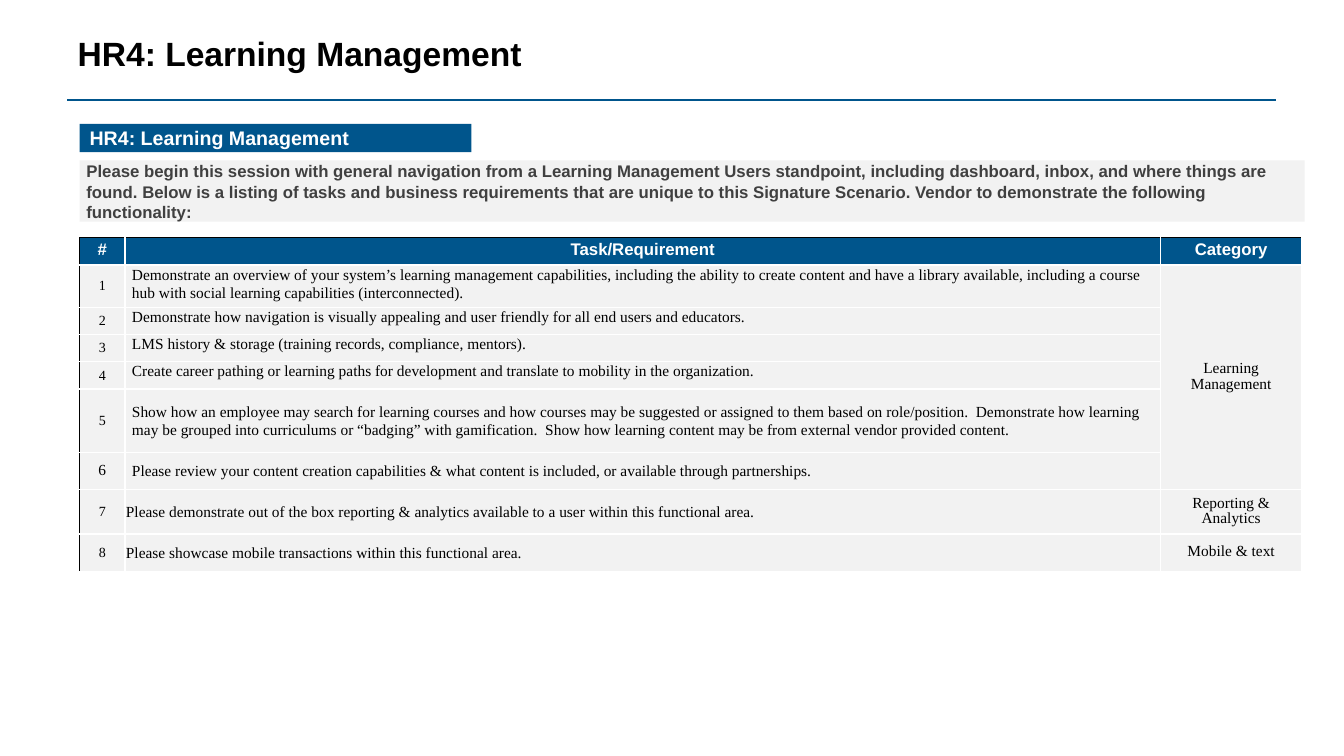
import pptx
import pptx.util
import pptx.dml.color
import pptx.enum.text
import pptx.enum.shapes
import pptx.oxml
import pptx.oxml.ns

BLUE, GREY, DARK, WHITE, BLACK = "00558C", "F2F2F2", "404040", "FFFFFF", "000000"
SANS, SERIF = "Arial", "Times New Roman"
MIDDLE, TOP = pptx.enum.text.MSO_ANCHOR.MIDDLE, pptx.enum.text.MSO_ANCHOR.TOP
LEFT, CENTER = pptx.enum.text.PP_ALIGN.LEFT, pptx.enum.text.PP_ALIGN.CENTER
HEADINGS = ["#", "Task/Requirement", "Category"]
COLUMN_WIDTHS = [45, 1028, 140]
ROW_HEIGHTS = [27, 42, 27, 27, 27, 63, 37, 44, 37]
TASKS = [
    "Demonstrate an overview of your system’s learning management capabilities, including the ability to create content and have a library available, including a course hub with social learning capabilities (interconnected).",
    "Demonstrate how navigation is visually appealing and user friendly for all end users and educators.",
    "LMS history & storage (training records, compliance, mentors).",
    "Create career pathing or learning paths for development and translate to mobility in the organization.",
    "Show how an employee may search for learning courses and how courses may be suggested or assigned to them based on role/position.  Demonstrate how learning may be grouped into curriculums or “badging” with gamification.  Show how learning content may be from external vendor provided content.",
    "Please review your content creation capabilities & what content is included, or available through partnerships.",
    "Please demonstrate out of the box reporting & analytics available to a user within this functional area.",
    "Please showcase mobile transactions within this functional area.",
]
CATEGORIES = {1: "Learning Management", 7: "Reporting & Analytics", 8: "Mobile & text"}
MERGED_ROWS = 6
INTRO = "Please begin this session with general navigation from a Learning Management Users standpoint, including dashboard, inbox, and where things are found. Below is a listing of tasks and business requirements that are unique to this Signature Scenario. Vendor to demonstrate the following functionality:"


def px(length):
    """Turn px, at 100 to the inch, into EMU."""
    return pptx.util.Emu(length * 9144)


def rgb(code):
    """Return the colour for a hex string."""
    return pptx.dml.color.RGBColor.from_string(code)


def write(frame, text, size, font, color, bold=False, align=LEFT, spacing=None, after=0):
    """Write one formatted paragraph into a text frame."""
    frame.word_wrap = True
    paragraph = frame.paragraphs[0]
    paragraph.text = text
    paragraph.alignment = align
    paragraph.line_spacing = spacing
    paragraph.space_after = pptx.util.Pt(after)
    paragraph.font.size = pptx.util.Pt(size)
    paragraph.font.name = font
    paragraph.font.bold = bold
    paragraph.font.color.rgb = rgb(color)


def add_panel(slide, left, top, width, height, color):
    """Add a plain filled rectangle."""
    panel = slide.shapes.add_shape(
        pptx.enum.shapes.MSO_SHAPE.RECTANGLE, px(left), px(top), px(width), px(height))
    panel.shadow.inherit = False
    panel.fill.solid()
    panel.fill.fore_color.rgb = rgb(color)
    panel.line.fill.background()
    return panel


def add_heading(slide, left, top, width, height):
    """Place the title and the rule below it."""
    title = slide.shapes.title
    title.left, title.top, title.width, title.height = map(px, (left, top, width, height))
    title.text_frame.vertical_anchor = TOP
    write(title.text_frame, "HR4: Learning Management", 24, SANS, BLACK, True, spacing=0.9)
    rule_y = px(top + height + 2)
    rule = slide.shapes.add_connector(
        pptx.enum.shapes.MSO_CONNECTOR.STRAIGHT, px(left), rule_y, px(left + width - 1), rule_y)
    rule.line.color.rgb = rgb(BLUE)
    rule.line.width = pptx.util.Pt(1.5)
    rule._element.spPr.append(pptx.oxml.parse_xml(
        f'<a:effectLst {pptx.oxml.ns.nsdecls("a")}/>'))


def add_intro(slide, left, top, width, height):
    """Place the introduction over its grey panel."""
    add_panel(slide, left, top, width, height, GREY)
    intro = slide.shapes.add_textbox(px(left - 3), px(top - 4), px(width), px(height + 10))
    write(intro.text_frame, INTRO, 12, SANS, DARK, True)


def add_banner(slide, left, top, width, height):
    """Place the section banner."""
    banner = add_panel(slide, left, top, width, height, BLUE)
    banner.text_frame.vertical_anchor = MIDDLE
    write(banner.text_frame, "HR4: Learning Management", 14, SANS, WHITE, True)


def format_cell(cell, fill, margins, anchor, left_edge=WHITE, top_edge=WHITE):
    """Set the fill, margins, anchor and borders of a cell."""
    cell.margin_left, cell.margin_top, cell.margin_right, cell.margin_bottom = map(px, margins)
    cell.vertical_anchor = anchor
    properties = cell._tc.get_or_add_tcPr()
    for side, color in zip("LRTB", (left_edge, WHITE, top_edge, WHITE)):
        properties.append(pptx.oxml.parse_xml(
            f'<a:ln{side} {pptx.oxml.ns.nsdecls("a")} w="12700"><a:solidFill>'
            f'<a:srgbClr val="{color}"/></a:solidFill></a:ln{side}>'))
    cell.fill.solid()
    cell.fill.fore_color.rgb = rgb(fill)


def fill_task(cell, number, task):
    """Write a task, with the tighter margins used after the merged rows."""
    merged = number <= MERGED_ROWS
    margins = (7, 0, 7, 0) if merged else (1, 1, 1, 0)
    format_cell(cell, GREY, margins, TOP if number < 5 else MIDDLE)
    write(cell.text_frame, task, 11, SERIF, BLACK, spacing=1.07 if merged else None)


def add_requirements(slide, left, top, width, height):
    """Place the table of tasks and categories."""
    table = slide.shapes.add_table(
        len(ROW_HEIGHTS), len(COLUMN_WIDTHS), px(left), px(top), px(width), px(height)).table
    for column, column_width in zip(table.columns, COLUMN_WIDTHS):
        column.width = px(column_width)
    for row, row_height in zip(table.rows, ROW_HEIGHTS):
        row.height = px(row_height)
    margins, exact = (5, 5, 5, 5), pptx.util.Pt(11)
    for index, heading in enumerate(HEADINGS):
        cell = table.cell(0, index)
        format_cell(cell, BLUE, margins, MIDDLE, WHITE if index else BLACK, BLACK)
        write(cell.text_frame, heading, 12, SANS, WHITE, True, CENTER, exact)
    for number, task in enumerate(TASKS, 1):
        number_cell, task_cell, category_cell = (table.cell(number, i) for i in range(3))
        format_cell(number_cell, GREY, margins, MIDDLE, BLACK)
        write(number_cell.text_frame, str(number), 11 if number == 6 else 10, SERIF, BLACK,
              False, CENTER, exact, 1.5)
        fill_task(task_cell, number, task)
        format_cell(category_cell, GREY, margins, MIDDLE)
        if number in CATEGORIES:
            write(category_cell.text_frame, CATEGORIES[number], 11, SERIF, BLACK,
                  False, CENTER, exact, 1.5)
    table.cell(1, 2).merge(table.cell(MERGED_ROWS, 2))


def main():
    """Build and save the slide."""
    deck = pptx.Presentation()
    deck.slide_width, deck.slide_height = px(1334), px(750)
    slide = deck.slides.add_slide(deck.slide_layouts[5])
    add_heading(slide, 67, 32, 1201, 65)
    add_requirements(slide, 79, 236, sum(COLUMN_WIDTHS), sum(ROW_HEIGHTS))
    add_intro(slide, 79, 159, 1216, 61)
    add_banner(slide, 79, 123, 389, 28)
    deck.save("out.pptx")


if __name__ == "__main__":
    main()
